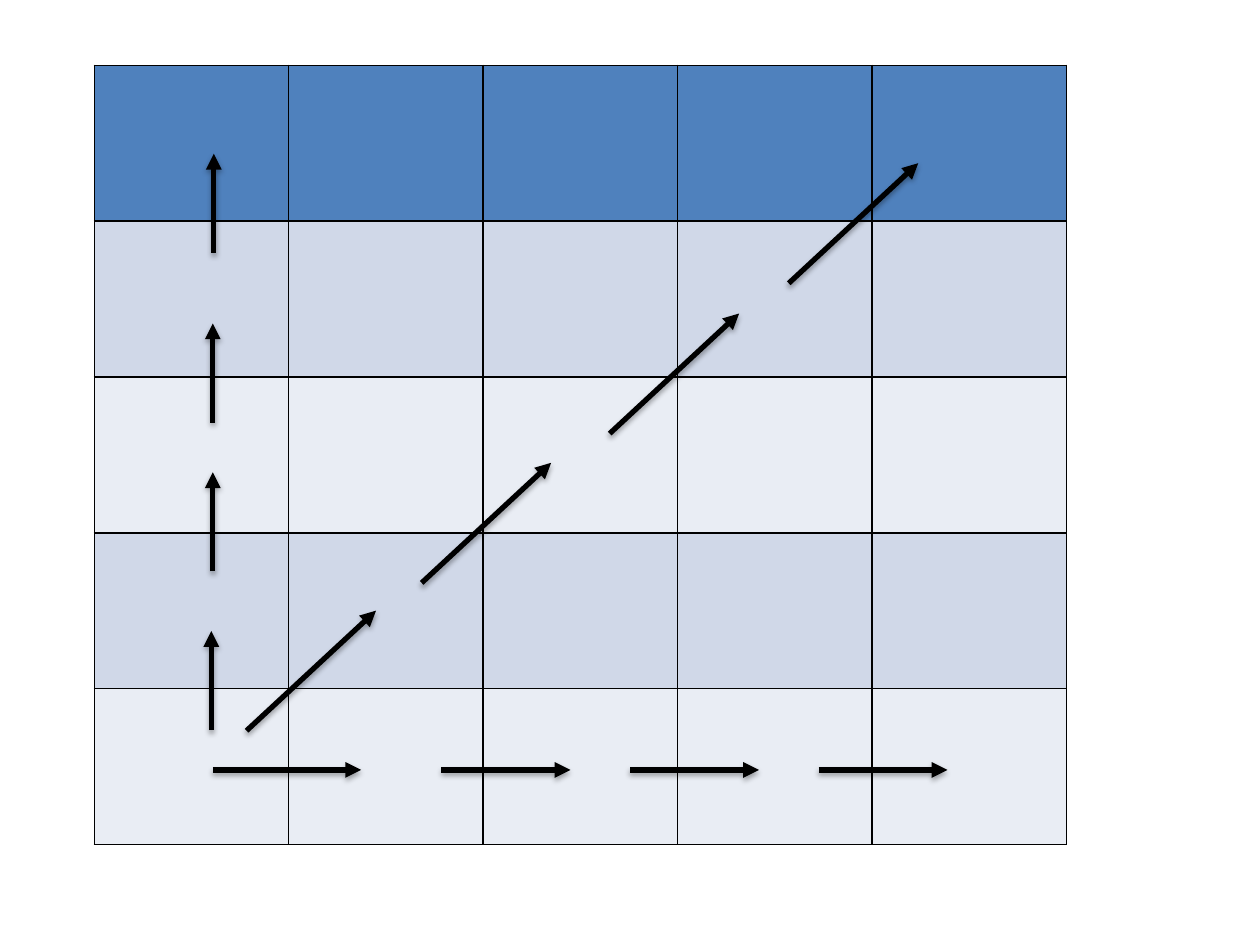
from lxml import etree
from pptx import Presentation
from pptx.dml.color import RGBColor
from pptx.enum.shapes import MSO_CONNECTOR
from pptx.oxml import parse_xml
from pptx.util import Cm, Pt

STRAIGHT = MSO_CONNECTOR.STRAIGHT
NAMESPACE = "http://schemas.openxmlformats.org/drawingml/2006/main"
BLACK = "000000"
ROW_FILLS = ["4F81BD", "D0D8E8", "E9EDF4", "D0D8E8", "E9EDF4"]
COLUMN_COUNT = 5
GRID_BOX = (1.9, 1.32, 19.6, 15.7)

RIGHTWARD_STEPS = [(2.39, 14.2, 2.99, 0)] + [
    (x, 14.2, 2.6, 0) for x in (7, 10.8, 14.6)
]
UPWARD_STEPS = [
    (x, y, 0, -2) for x, y in ((2.36, 13.4), (2.39, 10.2), (2.39, 7.2), (2.41, 3.78))
]
DIAGONAL_STEPS = [
    (x, y, 2.61, -2.42)
    for x, y in ((3.07, 13.41), (6.6, 10.43), (10.39, 7.42), (14, 4.39))
]


def rgb(value):
    """Turn a hex string into a colour."""
    return RGBColor.from_string(value)


def add_border(cell, color, width):
    """Draw a solid line on all four sides of a cell."""
    properties = cell._tc.get_or_add_tcPr()
    for side in ("lnL", "lnR", "lnT", "lnB"):
        properties.append(parse_xml(
            f'<a:{side} xmlns:a="{NAMESPACE}" w="{Pt(width)}"><a:solidFill>'
            f'<a:srgbClr val="{color}"/></a:solidFill></a:{side}>'
        ))


def add_grid(slide, box):
    """Fill the box with an even grid of banded empty cells."""
    left, top, width, height = box
    grid = slide.shapes.add_table(
        len(ROW_FILLS), COLUMN_COUNT, Cm(left), Cm(top), Cm(width), Cm(height)
    ).table
    for row, row_fill in zip(grid.rows, ROW_FILLS):
        for cell in row.cells:
            add_border(cell, BLACK, 1)
            cell.fill.solid()
            cell.fill.fore_color.rgb = rgb(row_fill)


def add_arrow(slide, start, end):
    """Add a black arrow with a soft shadow below it."""
    arrow = slide.shapes.add_connector(
        STRAIGHT, *(Cm(length) for length in (*start, *end))
    )
    arrow.line.color.rgb = rgb(BLACK)
    arrow.line.width = Pt(3)
    etree.SubElement(
        arrow.line._get_or_add_ln(), f"{{{NAMESPACE}}}tailEnd", type="triangle"
    )
    arrow._element.spPr.append(parse_xml(
        f'<a:effectLst xmlns:a="{NAMESPACE}"><a:outerShdw blurRad="{Pt(3.1)}" '
        f'dist="{Pt(1.8)}" dir="5400000" rotWithShape="0"><a:srgbClr val="{BLACK}">'
        '<a:alpha val="35000"/></a:srgbClr></a:outerShdw></a:effectLst>'
    ))


def add_steps(slide, box, steps):
    """Place a run of arrows relative to the box."""
    left, top = box[:2]
    for x, y, across, down in steps:
        start = (left + x, top + y)
        add_arrow(slide, start, (start[0] + across, start[1] + down))


def main():
    """Build and save the slide."""
    presentation = Presentation()
    presentation.slide_width = Cm(25.4)
    presentation.slide_height = Cm(19.05)
    slide = presentation.slides.add_slide(presentation.slide_layouts[6])
    add_grid(slide, GRID_BOX)
    for steps in (RIGHTWARD_STEPS, UPWARD_STEPS, DIAGONAL_STEPS):
        add_steps(slide, GRID_BOX, steps)
    presentation.save("out.pptx")


if __name__ == "__main__":
    main()
